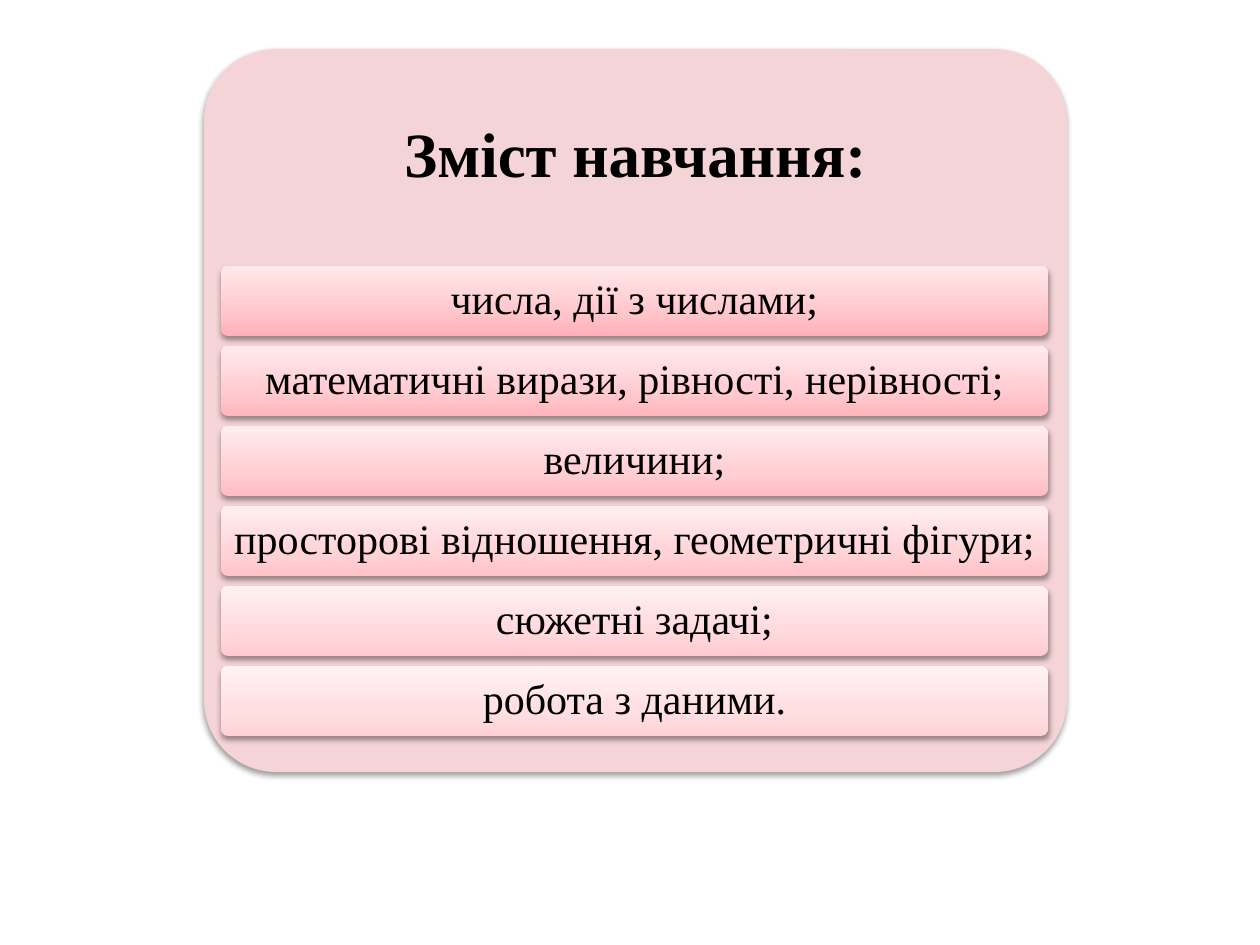
from copy import deepcopy
from dataclasses import dataclass

from lxml.etree import SubElement
from pptx import Presentation
from pptx.dml.color import RGBColor
from pptx.enum.shapes import MSO_SHAPE
from pptx.enum.text import MSO_ANCHOR, MSO_AUTO_SIZE, PP_ALIGN
from pptx.oxml.ns import qn
from pptx.shapes.autoshape import Shape
from pptx.slide import Slide
from pptx.util import Emu, Pt

EMU_PER_PX = 914400 / 126
FONT = "Times New Roman"
ROW_TOP, ROW_PITCH = 266, 80
STOP_POSITIONS = (0, 0.35, 1)


@dataclass(frozen=True)
class Area:
    left: int
    top: int
    width: int
    height: int


@dataclass(frozen=True)
class Topic:
    text: str
    stops: tuple[str, str, str]


PANEL = Area(204, 49, 863, 723)
HEADING = Area(204, 49, 863, 217)
TOPICS = (
    Topic("числа, дії з числами;", ("FFB0B7", "FFC7CC", "FFE9EB")),
    Topic("математичні вирази, рівності, нерівності;", ("FFB6BD", "FFCBD0", "FFEBED")),
    Topic("величини;", ("FFBCC3", "FFCFD4", "FFEDEE")),
    Topic("просторові відношення, геометричні фігури;", ("FFC3C9", "FFD4D8", "FFEEF0")),
    Topic("сюжетні задачі;", ("FFCACF", "FFD9DD", "FFF0F2")),
    Topic("робота з даними.", ("FFD2D6", "FFDFE2", "FFF2F3")),
)


def px(length: int) -> Emu:
    return Emu(round(length * EMU_PER_PX))


def color(value: str) -> RGBColor:
    return RGBColor.from_string(value)


def place(area: Area) -> tuple[Emu, Emu, Emu, Emu]:
    return px(area.left), px(area.top), px(area.width), px(area.height)


def add_shadow(shape: Shape) -> None:
    """Cast a soft shadow straight down."""
    shape.shadow.inherit = False
    effects = shape._element.spPr.find(qn("a:effectLst"))
    shadow = SubElement(effects, qn("a:outerShdw"), blurRad=str(Pt(3.5)),
                        dist=str(Pt(2)), dir="5400000", rotWithShape="0")
    shade = SubElement(shadow, qn("a:srgbClr"), val="000000")
    SubElement(shade, qn("a:alpha"), val="38000")


def add_rounded_box(page: Slide, area: Area) -> Shape:
    box = page.shapes.add_shape(MSO_SHAPE.ROUNDED_RECTANGLE, *place(area))
    box.adjustments[0] = 0.1
    box.line.fill.background()
    add_shadow(box)
    return box


def fill_gradient(box: Shape, stops: tuple[str, str, str]) -> None:
    """Blend the three colours from the bottom edge to the top."""
    box.fill.gradient()
    box.fill.gradient_angle = 90
    stop_list = box._element.spPr.find(qn("a:gradFill")).find(qn("a:gsLst"))
    stop_list.append(deepcopy(stop_list[-1]))
    for stop, position, value in zip(box.fill.gradient_stops, STOP_POSITIONS, stops):
        stop.position = position
        stop.color.rgb = color(value)


def write(box: Shape, text: str, size: int, inset: int, bold: bool = False) -> None:
    frame = box.text_frame
    frame.word_wrap = True
    frame.auto_size = MSO_AUTO_SIZE.NONE
    frame.vertical_anchor = MSO_ANCHOR.MIDDLE
    frame.margin_left = frame.margin_right = px(inset)
    frame.margin_top = frame.margin_bottom = px(inset)
    para = frame.paragraphs[0]
    para.alignment = PP_ALIGN.CENTER
    para.line_spacing = 0.9
    span = para.add_run()
    span.text = text
    span.font.name = FONT
    span.font.size = Pt(size)
    span.font.bold = bold
    span.font.color.rgb = color("000000")


def main() -> None:
    deck = Presentation()
    deck.slide_width, deck.slide_height = px(1260), px(945)
    page = deck.slides.add_slide(deck.slide_layouts[5])

    panel = add_rounded_box(page, PANEL)
    panel.fill.solid()
    panel.fill.fore_color.rgb = color("F5D4D7")

    title = page.shapes.title
    title.left, title.top, title.width, title.height = place(HEADING)
    write(title, "Зміст навчання:", size=36, inset=19, bold=True)
    panel._element.addnext(title._element)  # in front of the panel

    for index, topic in enumerate(TOPICS):
        row = add_rounded_box(page, Area(221, ROW_TOP + index * ROW_PITCH, 827, 70))
        fill_gradient(row, topic.stops)
        write(row, topic.text, size=24, inset=7)

    deck.save("out.pptx")


if __name__ == "__main__":
    main()
